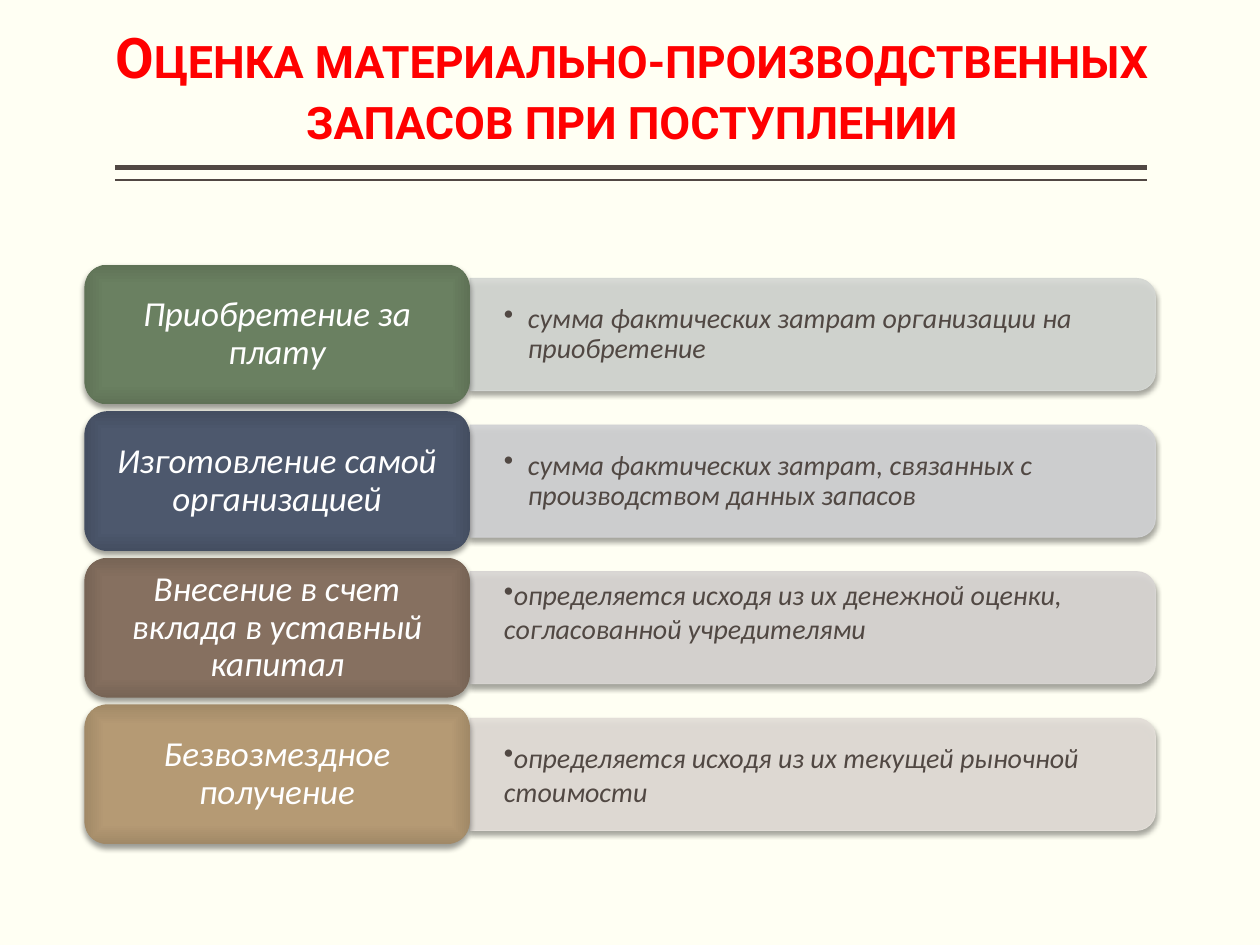
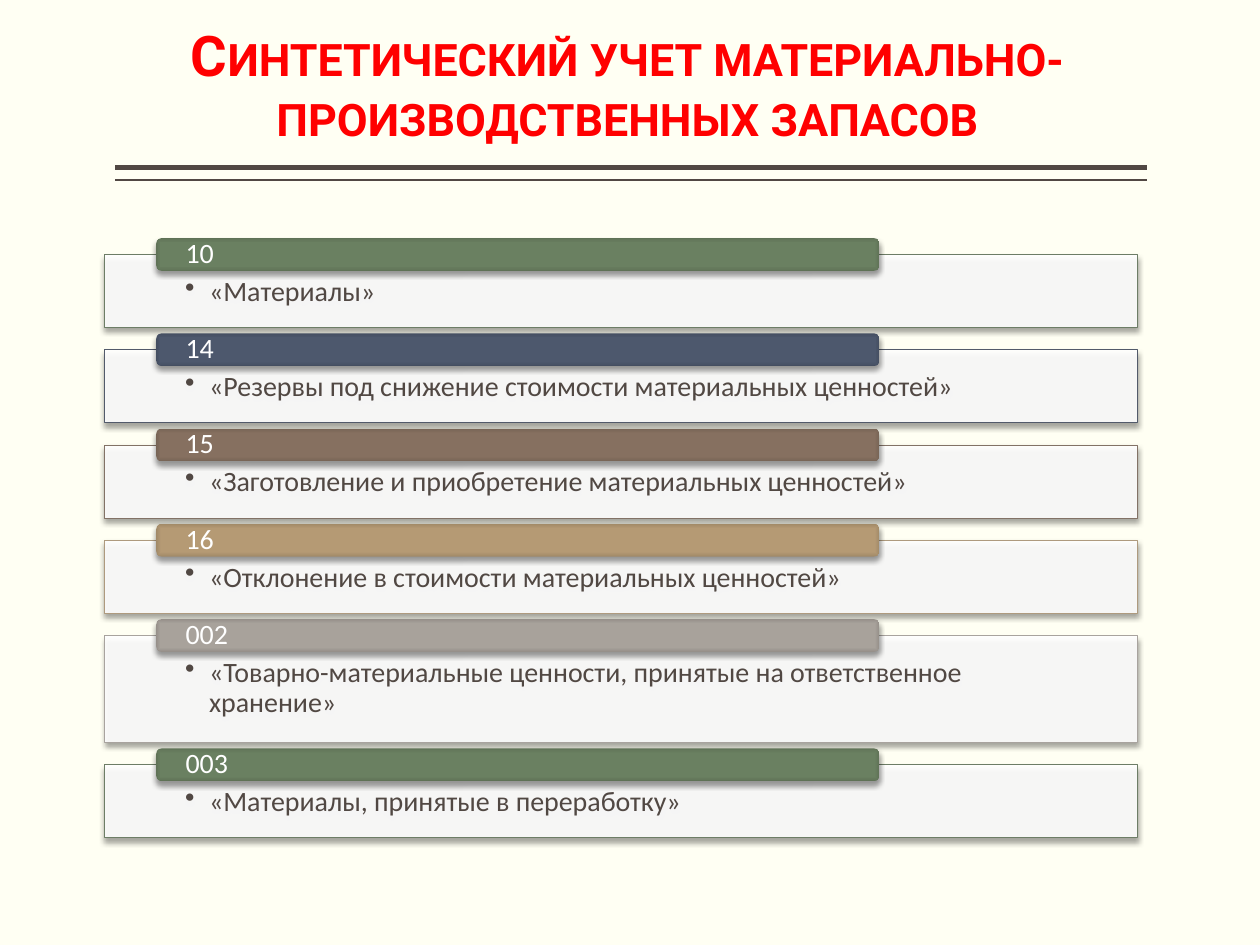
from dataclasses import dataclass

from lxml import etree
from pptx import Presentation
from pptx.dml.color import RGBColor
from pptx.enum.shapes import MSO_CONNECTOR, MSO_SHAPE
from pptx.enum.text import MSO_ANCHOR, PP_ALIGN
from pptx.oxml.ns import qn
from pptx.util import Inches, Length, Pt

STRAIGHT = MSO_CONNECTOR.STRAIGHT
RECTANGLE, ROUNDED = MSO_SHAPE.RECTANGLE, MSO_SHAPE.ROUNDED_RECTANGLE
TWO_ROUND_CORNERS = MSO_SHAPE.ROUND_2_SAME_RECTANGLE
TOP, MIDDLE, BOTTOM = MSO_ANCHOR.TOP, MSO_ANCHOR.MIDDLE, MSO_ANCHOR.BOTTOM
LEFT, CENTER = PP_ALIGN.LEFT, PP_ALIGN.CENTER

IVORY = RGBColor(0xFF, 0xFF, 0xF3)
WHITE = RGBColor(0xFF, 0xFF, 0xFF)
RED = RGBColor(0xFF, 0x00, 0x00)
BROWN = RGBColor(0x51, 0x48, 0x43)

HANGING = Inches(0.19)


@dataclass(frozen=True)
class Accent:
    """Gradient from centre to edge, panel outline and pale bar tint."""
    centre: RGBColor
    middle: RGBColor
    edge: RGBColor
    outline: RGBColor
    tint: RGBColor


def accent(*codes: str) -> Accent:
    return Accent(*map(RGBColor.from_string, codes))


GREEN = accent("6B8162", "6A8061", "5F7256", "6D7D66", "D4D7D3")
BLUE = accent("4E596E", "4D586D", "444E61", "525A6A", "D1D2D4")
UMBER = accent("877161", "867060", "776455", "827266", "D8D5D3")
SAND = accent("B79B75", "B59A74", "A18967", "AE9A7E", "E3DED8")
GREY = accent("AAA39C", "A8A29B", "96908A", "A8A39E", "E3DED8")


@dataclass(frozen=True)
class Box:
    left: Length
    top: Length
    width: Length
    height: Length


@dataclass(frozen=True)
class TextStyle:
    size: int
    color: RGBColor
    insets: tuple[float, float, float, float]
    anchor: MSO_ANCHOR = MIDDLE
    align: PP_ALIGN = LEFT
    spacing: float = 0.9
    font: str = "Calibri"
    bold: bool = False
    italic: bool = False
    small_caps: bool = False
    bullet_indent: Length | None = None


@dataclass(frozen=True)
class Receipt:
    """A way of receiving stock and how it is valued."""
    way: str
    valuation: str
    accent: Accent
    style: TextStyle
    lift: Length = Inches(0)


@dataclass(frozen=True)
class Account:
    number: str
    title: str
    accent: Accent
    height: Length = Inches(0.58)


TITLE = TextStyle(32, RED, (0, 0.05, 0, 0.05), BOTTOM, CENTER,
                  font="Roboto", bold=True, small_caps=True)
CARD = TextStyle(20, WHITE, (0.08, 0.04, 0.08, 0.04), align=CENTER, italic=True)
BAR_INSETS = (0.27, 0.14, 0.27, 0.14)
BAR_HANGING = TextStyle(16, BROWN, BAR_INSETS, italic=True, bullet_indent=HANGING)
BAR_FLUSH = TextStyle(16, BROWN, BAR_INSETS, spacing=1.0, italic=True,
                      bullet_indent=Inches(0))
PANEL = TextStyle(16, BROWN, (0.64, 0.18, 0.64, 0.12), TOP, bullet_indent=HANGING)
TAB = TextStyle(16, WHITE, (0.22, 0, 0.22, 0))

RECEIPTS = [
    Receipt("Приобретение за плату",
            "сумма фактических затрат организации на приобретение",
            GREEN, BAR_HANGING),
    Receipt("Изготовление самой организацией",
            "сумма фактических затрат, связанных с производством данных запасов",
            BLUE, BAR_HANGING),
    Receipt("Внесение в счет вклада в уставный капитал",
            "определяется исходя из их денежной оценки, согласованной учредителями",
            UMBER, BAR_FLUSH, lift=Inches(0.13)),
    Receipt("Безвозмездное получение",
            "определяется исходя из их текущей рыночной стоимости",
            SAND, BAR_FLUSH),
]
ACCOUNTS = [
    Account("10", "«Материалы»", GREEN),
    Account("14", "«Резервы под снижение стоимости материальных ценностей»", BLUE),
    Account("15", "«Заготовление и приобретение материальных ценностей»", UMBER),
    Account("16", "«Отклонение в стоимости материальных ценностей»", SAND),
    Account("002", "«Товарно-материальные ценности, принятые на ответственное хранение»",
            GREY, Inches(0.85)),
    Account("003", "«Материалы, принятые в переработку»", GREEN),
]


def write(shape, text: str, style: TextStyle) -> None:
    frame = shape.text_frame
    frame.word_wrap = True
    frame.vertical_anchor = style.anchor
    (frame.margin_left, frame.margin_top,
     frame.margin_right, frame.margin_bottom) = map(Inches, style.insets)
    paragraph = frame.paragraphs[0]
    paragraph.alignment = style.align
    paragraph.line_spacing = style.spacing
    if style.bullet_indent is not None:
        paragraph.level = 1
        properties = paragraph._p.get_or_add_pPr()
        properties.set("marL", str(style.bullet_indent))
        properties.set("indent", str(-style.bullet_indent))
        etree.SubElement(properties, qn("a:buChar"), char="•")
    run = paragraph.add_run()
    run.text = text
    font = run.font
    font.name, font.size = style.font, Pt(style.size)
    font.bold, font.italic = style.bold, style.italic
    font.color.rgb = style.color
    if style.small_caps:
        run._r.get_or_add_rPr().set("cap", "small")


def add_text(slide, box: Box, text: str, style: TextStyle) -> None:
    write(slide.shapes.add_textbox(box.left, box.top, box.width, box.height), text, style)


def add_shadowed(slide, kind: MSO_SHAPE, box: Box):
    shape = slide.shapes.add_shape(kind, box.left, box.top, box.width, box.height)
    shape.shadow.inherit = False
    effects = shape._element.spPr.find(qn("a:effectLst"))
    shadow = etree.SubElement(effects, qn("a:outerShdw"), blurRad=str(Pt(3.1)),
                              dist=str(Pt(2)), dir="5400000", rotWithShape="0")
    color = etree.SubElement(shadow, qn("a:srgbClr"), val="000000")
    etree.SubElement(color, qn("a:alpha"), val="38000")
    return shape


def add_pale(slide, kind: MSO_SHAPE, box: Box, fill: RGBColor, outline: RGBColor):
    """Add a shadowed shape with a 90 % opaque fill and a thin outline."""
    shape = add_shadowed(slide, kind, box)
    shape.fill.solid()
    shape.fill.fore_color.rgb = fill
    color = shape._element.spPr.find(qn("a:solidFill")).find(qn("a:srgbClr"))
    etree.SubElement(color, qn("a:alpha"), val="90000")
    shape.line.color.rgb = outline
    shape.line.width = Pt(0.5)
    return shape


def add_shaded(slide, box: Box, colors: Accent, text: str, style: TextStyle) -> None:
    """Add a rounded shape that darkens from its centre to its edges."""
    shape = add_shadowed(slide, ROUNDED, box)
    shape.line.fill.background()
    shape.fill.gradient()
    gradient = shape._element.spPr.find(qn("a:gradFill"))
    for part in list(gradient):
        gradient.remove(part)
    stops = etree.SubElement(gradient, qn("a:gsLst"))
    for percent, rgb in ((0, colors.centre), (71, colors.middle), (100, colors.edge)):
        stop = etree.SubElement(stops, qn("a:gs"), pos=str(percent * 1000))
        etree.SubElement(stop, qn("a:srgbClr"), val=str(rgb))
    spread = etree.SubElement(gradient, qn("a:path"), path="rect")
    etree.SubElement(spread, qn("a:fillToRect"), l="50000", t="50000", r="50000", b="50000")
    write(shape, text, style)


def add_titled_slide(deck, title: str, title_box: Box):
    slide = deck.slides.add_slide(deck.slide_layouts[6])
    slide.background.fill.solid()
    slide.background.fill.fore_color.rgb = IVORY
    for y, weight in ((1.33, 3), (1.43, 1)):
        rule = slide.shapes.add_connector(STRAIGHT, Inches(9.1), Inches(y),
                                          Inches(0.91), Inches(y))
        rule.line.color.rgb = BROWN
        rule.line.width = Pt(weight)
        etree.SubElement(rule._element.spPr, qn("a:effectLst"))
    add_text(slide, title_box, title, TITLE)
    return slide


def add_receipt(slide, receipt: Receipt, top: Length) -> None:
    card = Box(Inches(0.67), top, Inches(3.06), Inches(1.11))
    bar_left, bar_length, bar_depth = card.left + card.width, Inches(5.44), Inches(0.89)
    middle = top + card.height // 2
    upright = Box(bar_left + (bar_length - bar_depth) // 2, middle - bar_length // 2,
                  bar_depth, bar_length)
    tint = receipt.accent.tint
    add_pale(slide, TWO_ROUND_CORNERS, upright, tint, tint).rotation = 90
    text_height = Inches(0.8)
    text_box = Box(bar_left, middle - text_height // 2 - receipt.lift,
                   Inches(5.4), text_height)
    add_text(slide, text_box, receipt.valuation, receipt.style)
    add_shaded(slide, card, receipt.accent, receipt.way, CARD)


def add_account(slide, account: Account, top: Length) -> None:
    panel_box = Box(Inches(0.83), top, Inches(8.2), account.height)
    panel = add_pale(slide, RECTANGLE, panel_box, WHITE, account.accent.outline)
    write(panel, account.title, PANEL)
    tab = Box(Inches(1.24), top - Inches(0.13), Inches(5.74), Inches(0.26))
    add_shaded(slide, tab, account.accent, account.number, TAB)


def build_valuation(deck) -> None:
    slide = add_titled_slide(
        deck, "Оценка материально-производственных запасов при поступлении",
        Box(Inches(0.35), Inches(0), Inches(9.33), Inches(1.25)))
    first, last = Inches(2.1), Inches(5.59)
    pitch = (last - first) // (len(RECEIPTS) - 1)
    for row, receipt in enumerate(RECEIPTS):
        add_receipt(slide, receipt, first + row * pitch)


def build_accounts(deck) -> None:
    slide = add_titled_slide(
        deck, "Синтетический учет материально-производственных запасов",
        Box(Inches(0.51), Inches(0.21), Inches(8.94), Inches(1.02)))
    top, bottom = Inches(2.02), Inches(6.65)
    free = bottom - top - sum(account.height for account in ACCOUNTS)
    gap = free // (len(ACCOUNTS) - 1)
    for account in ACCOUNTS:
        add_account(slide, account, top)
        top += account.height + gap


def main() -> None:
    deck = Presentation()
    deck.slide_width, deck.slide_height = Inches(10), Inches(7.5)
    build_valuation(deck)
    build_accounts(deck)
    deck.save("out.pptx")


if __name__ == "__main__":
    main()
